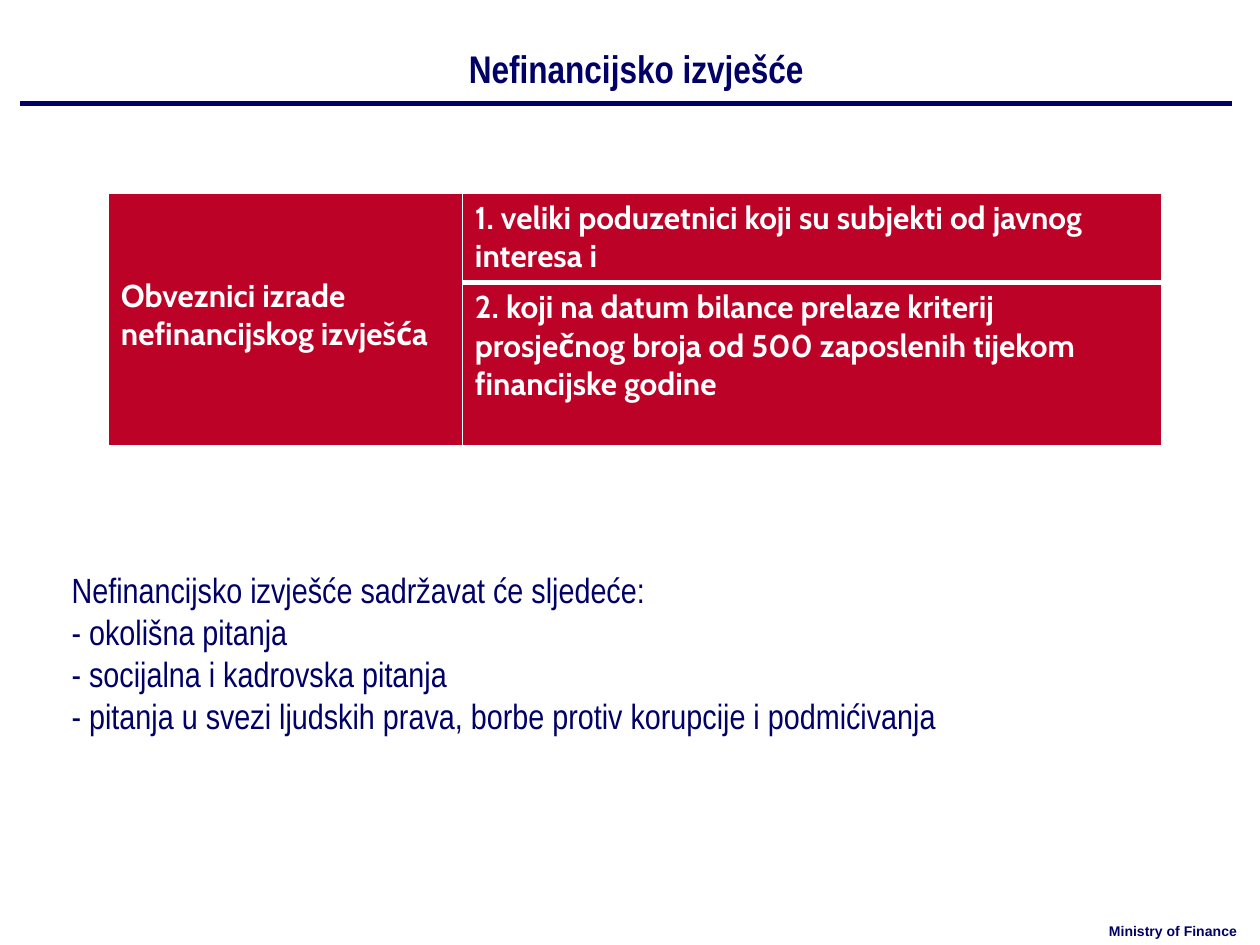
"""Build the slide on who must prepare a non-financial report and what it contains."""
from lxml import etree
from pptx import Presentation
from pptx.dml.color import RGBColor
from pptx.enum import shapes, text
from pptx.oxml import ns
from pptx.util import Inches, Pt

NAVY = RGBColor(0x00, 0x00, 0x66)
RED = RGBColor(0xBC, 0x03, 0x27)
WHITE = RGBColor(0xFF, 0xFF, 0xFF)


class SlideBuilder:
    def __init__(self, slide):
        self.slide = slide
        self.narrow = "Arial Narrow"
        self.table_font = "Cabin"

    def style(self, paragraph, font, size, color, bold):
        paragraph.font.name = font
        paragraph.font.size = Pt(size)
        paragraph.font.color.rgb = color
        paragraph.font.bold = bold

    def rule(self, left, right, y):
        line = self.slide.shapes.add_connector(
            shapes.MSO_CONNECTOR.STRAIGHT, Inches(left), Inches(y), Inches(right), Inches(y))
        line.line.color.rgb = NAVY
        line.line.width = Pt(3)
        etree.SubElement(line._element.spPr, ns.qn("a:effectLst"))

    def label(self, box, lines, size, font=None, bold=False, align=text.PP_ALIGN.LEFT):
        frame = self.slide.shapes.add_textbox(*map(Inches, box)).text_frame
        frame.word_wrap = True
        frame.text = "\n".join(lines)
        for paragraph in frame.paragraphs:
            paragraph.alignment = align
            self.style(paragraph, font or self.narrow, size, NAVY, bold)

    def border(self, cell, side, width):
        edge = etree.SubElement(cell._tc.get_or_add_tcPr(), ns.qn(f"a:{side}"), w=str(Pt(width)))
        fill = etree.SubElement(edge, ns.qn("a:solidFill"))
        etree.SubElement(fill, ns.qn("a:srgbClr"), val=str(WHITE))

    def obligations(self, left, top, widths, heights, heading, conditions):
        table = self.slide.shapes.add_table(
            len(heights), len(widths), Inches(left), Inches(top),
            Inches(sum(widths)), Inches(sum(heights))).table
        for column, width in zip(table.columns, widths):
            column.width = Inches(width)
        for row, height in zip(table.rows, heights):
            row.height = Inches(height)
        subject = table.cell(0, 0)
        subject.merge(table.cell(len(heights) - 1, 0))
        subject.vertical_anchor = text.MSO_ANCHOR.MIDDLE
        subject.margin_bottom = Inches(0.13)
        subject.text = heading
        for row, condition in enumerate(conditions):
            table.cell(row, 1).text = condition
        for cell in table.iter_cells():
            for side, width in (("lnL", 1), ("lnR", 1), ("lnT", 1), ("lnB", 3)):
                self.border(cell, side, width)
            cell.fill.solid()
            cell.fill.fore_color.rgb = RED
            self.style(cell.text_frame.paragraphs[0], self.table_font, 18, WHITE, True)
        return table


def main():
    deck = Presentation()
    deck.slide_width, deck.slide_height = Inches(10), Inches(7.5)
    builder = SlideBuilder(deck.slides.add_slide(deck.slide_layouts[6]))
    center = text.PP_ALIGN.CENTER

    builder.rule(0.16, 9.78, 0.82)
    builder.label((8.62, 7.27, 1.38, 0.23), ["Ministry of Finance"], 8, "Arial", True, center)
    builder.label((0.55, 0.31, 9, 0.5), ["Nefinancijsko izvješće"], 22, bold=True, align=center)
    builder.label((0.47, 4.46, 9, 1.45), [
        "Nefinancijsko izvješće sadržavat će sljedeće:",
        "- okolišna pitanja",
        "- socijalna i kadrovska pitanja",
        "- pitanja u svezi ljudskih prava, borbe protiv korupcije i podmićivanja",
    ], 20)
    builder.obligations(
        0.86, 1.53, (2.81, 5.55), (0.71, 1.31),
        "Obveznici izrade nefinancijskog izvješća",
        ("1. veliki poduzetnici koji su subjekti od javnog interesa i",
         "2. koji na datum bilance prelaze kriterij prosječnog broja od 500 zaposlenih "
         "tijekom financijske godine"))
    deck.save("out.pptx")


if __name__ == "__main__":
    main()
